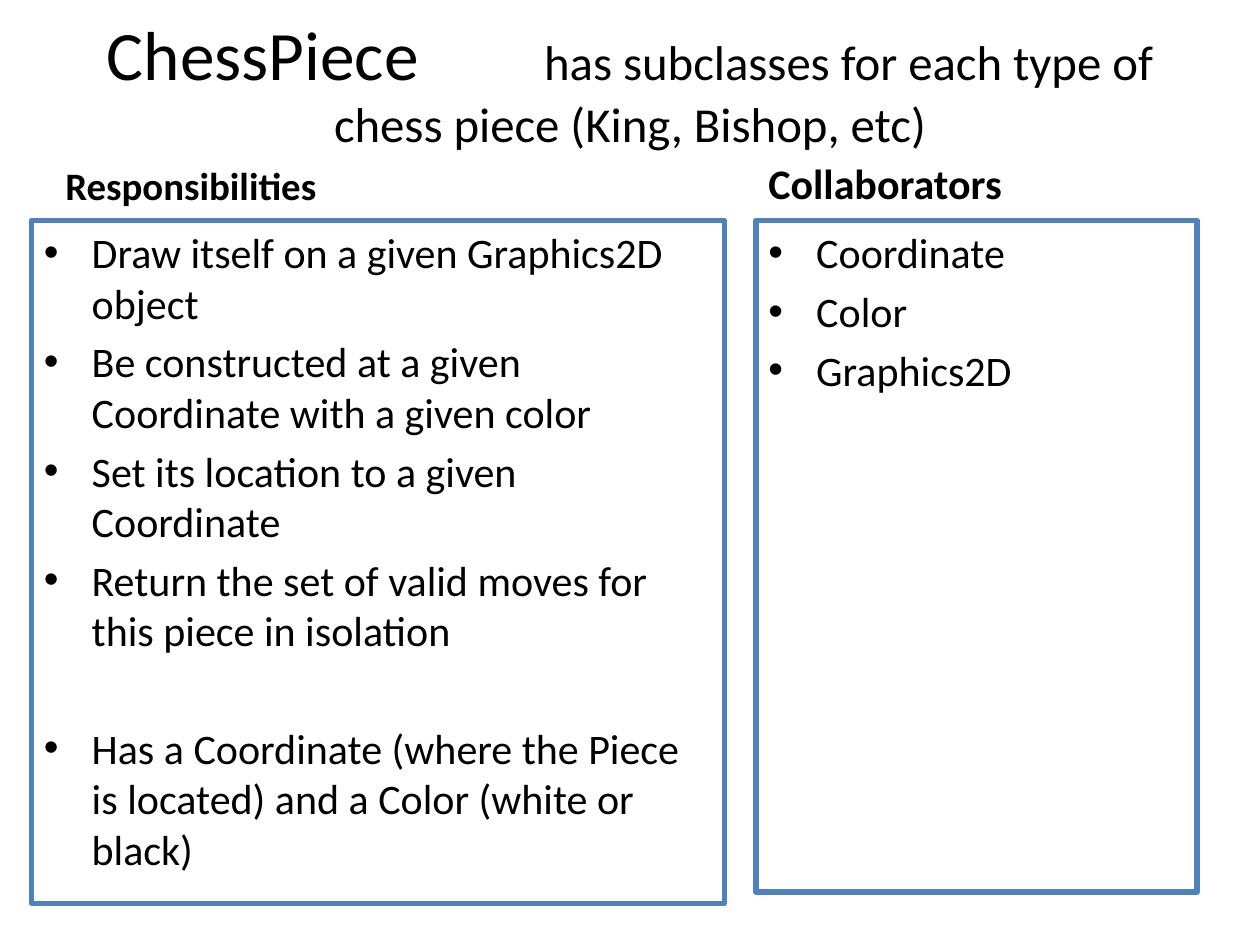
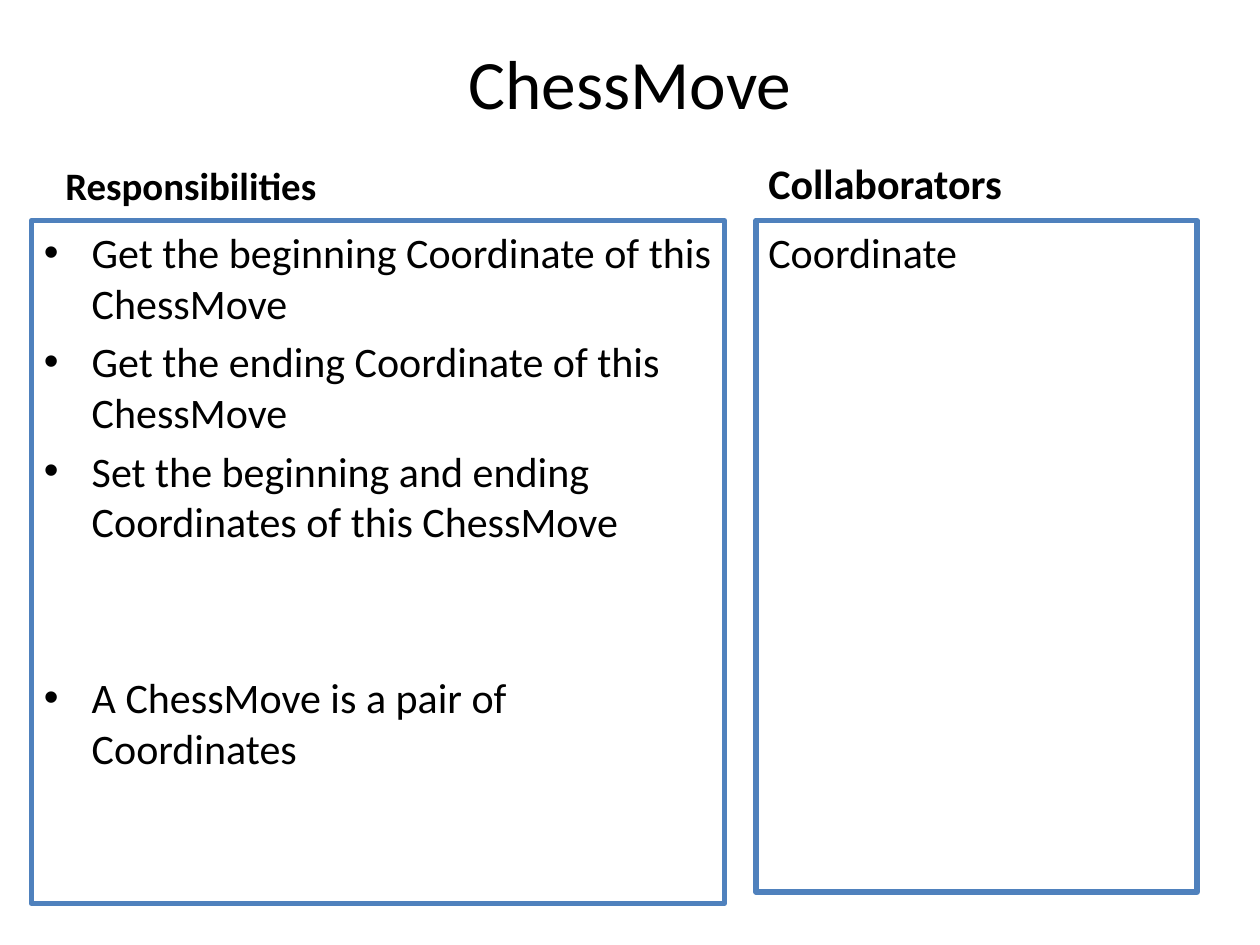
from lxml import etree
from pptx import Presentation, util as u
from pptx.dml.color import RGBColor
from pptx.enum import shapes, text
from pptx.oxml.ns import qn

BLACK = RGBColor(0x00, 0x00, 0x00)
BLUE = RGBColor(0x4F, 0x81, 0xBD)
WIDE, HIGH = 10, 7.5
GAP = "gap"

CARDS = [
    {
        "name": "ChessPiece",
        "note": "has subclasses for each type of chess piece (King, Bishop, etc)",
        "duties": [
            "Draw itself on a given Graphics2D object",
            "Be constructed at a given Coordinate with a given color",
            "Set its location to a given Coordinate",
            "Return the set of valid moves for this piece in isolation",
            GAP,
            "Has a Coordinate (where the Piece is located) and a Color (white or black)",
        ],
        "helpers": ["Coordinate", "Color", "Graphics2D"],
        "dots": True,
    },
    {
        "name": "ChessMove",
        "note": "",
        "duties": [
            "Get the beginning Coordinate of this ChessMove",
            "Get the ending Coordinate of this ChessMove",
            "Set the beginning and ending Coordinates of this ChessMove",
            GAP,
            GAP,
            "A ChessMove is a pair of Coordinates",
        ],
        "helpers": ["Coordinate"],
        "dots": False,
    },
]

TITLE = (0.5, 0.3, WIDE - 1, 0.7)
HEAD_TOP, HEAD_HIGH, BODY_TOP = 1, 0.7, 1.75
COLUMNS = [
    {"head": "Responsibilities", "key": "duties", "size": 22.2,
     "label": (0.42, 4.42), "panel": (0.25, 5.5, 5.42)},
    {"head": "Collaborators", "key": "helpers", "size": 24,
     "label": (6, 3.42), "panel": (6, 3.5, 5.33)},
]
BODY = 24
SPACE = 0.2 * BODY
BLANK = 1.2 * BODY + SPACE
HANG = u.Inches(0.38)


def style(item, **look):
    for key, value in look.items():
        setattr(item, key, value)


def write(para, words, size, bold=False):
    run = para.add_run()
    run.text = words
    style(run.font, name="Calibri", size=u.Pt(size), bold=bold)
    run.font.color.rgb = BLACK
    return run


def add_box(slide, place, anchor, line=False):
    place = [u.Inches(n) for n in place]
    if line:
        box = slide.shapes.add_shape(shapes.MSO_SHAPE.RECTANGLE, *place)
        box.shadow.inherit = False
        box.fill.background()
        box.line.color.rgb = BLUE
        box.line.width = u.Pt(3)
    else:
        box = slide.shapes.add_textbox(*place)
    style(box.text_frame, word_wrap=True, vertical_anchor=anchor,
          auto_size=text.MSO_AUTO_SIZE.NONE)
    return box.text_frame


def add_dot(para):
    props = para._p.get_or_add_pPr()
    props.set("marL", str(HANG))
    props.set("indent", str(-HANG))
    etree.SubElement(props, qn("a:buFont")).set("typeface", "Arial")
    etree.SubElement(props, qn("a:buChar")).set("char", "•")


def add_title(slide, card):
    para = add_box(slide, TITLE, text.MSO_ANCHOR.MIDDLE).paragraphs[0]
    para.alignment = text.PP_ALIGN.CENTER
    write(para, card["name"], 39.6)
    if card["note"]:
        space = write(para, " ", 39.6)
        space.font._element.set("spc", "6260")
        write(para, card["note"], 27.9)


def add_list(frame, items, dots):
    gaps, first = 0, True
    for item in items:
        if item == GAP:
            gaps += 1
            continue
        para = frame.paragraphs[0] if first else frame.add_paragraph()
        para.alignment = text.PP_ALIGN.LEFT
        if not first:
            para.space_before = u.Pt(SPACE + gaps * BLANK)
        if dots:
            add_dot(para)
        write(para, item, BODY)
        gaps, first = 0, False


def add_column(slide, card, col):
    left, wide = col["label"]
    head = add_box(slide, (left, HEAD_TOP, wide, HEAD_HIGH), text.MSO_ANCHOR.BOTTOM)
    write(head.paragraphs[0], col["head"], col["size"], bold=True)
    left, wide, high = col["panel"]
    panel = add_box(slide, (left, BODY_TOP, wide, high), text.MSO_ANCHOR.TOP, line=True)
    add_list(panel, card[col["key"]], col["key"] == "duties" or card["dots"])


def main():
    deck = Presentation()
    style(deck, slide_width=u.Inches(WIDE), slide_height=u.Inches(HIGH))
    for card in CARDS:
        slide = deck.slides.add_slide(deck.slide_layouts[6])
        add_title(slide, card)
        for col in COLUMNS:
            add_column(slide, card, col)
    deck.save("out.pptx")


if __name__ == "__main__":
    main()
